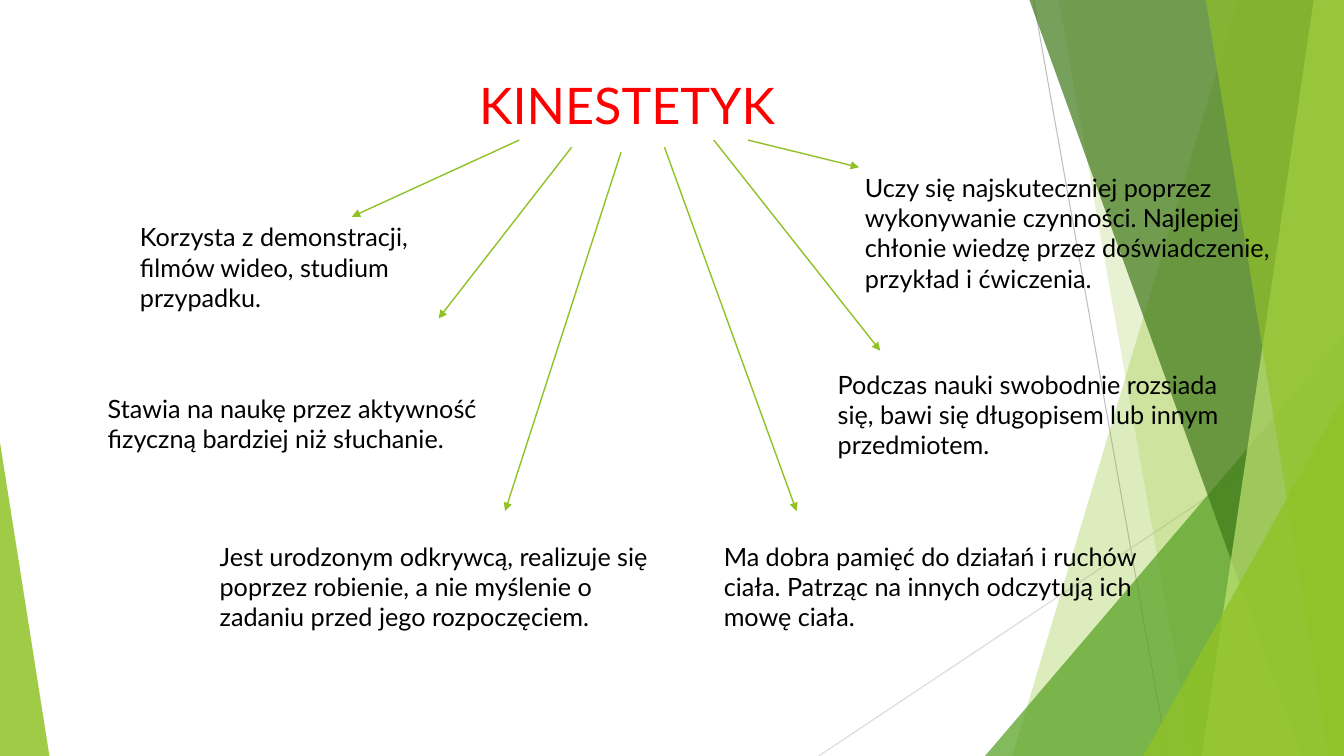
from dataclasses import dataclass

from lxml.etree import SubElement
from pptx import Presentation
from pptx.dml.color import RGBColor
from pptx.enum.shapes import MSO_CONNECTOR as Connector, MSO_SHAPE as Shape
from pptx.enum.text import MSO_ANCHOR as Anchor, MSO_AUTO_SIZE as AutoSize, PP_ALIGN as Align
from pptx.oxml.ns import qn
from pptx.util import Inches, Pt


@dataclass(frozen=True)
class Theme:
    font: str = "Lato"
    title_size: int = 36
    body_size: int = 18
    title: str = "FF0000"
    text: str = "000000"
    lime: str = "90C226"
    green: str = "54A021"
    forest: str = "3F7819"
    pale: str = "C0E474"
    gray: str = "BFBFBF"
    light_gray: str = "D9D9D9"


THEME = Theme()
WIDTH, HEIGHT = 13.33, 7.5

# Content: text and its box (left, top, width, height)
TITLE = "KINESTETYK"
TITLE_BOX = (0.74, 0.67, 9.4, 0.73)
TITLE_INDENT = 1.56
TRAITS = [
    ("Uczy się najskuteczniej poprzez wykonywanie czynności. Najlepiej chłonie "
     "wiedzę przez doświadczenie, przykład i ćwiczenia.", (8.48, 1.66, 4.48, 1.31)),
    ("Podczas nauki swobodnie rozsiada się, bawi się długopisem lub innym "
     "przedmiotem.", (8.21, 3.61, 4.31, 1.01)),
    ("Stawia na naukę przez aktywność fizyczną bardziej niż słuchanie.",
     (0.97, 3.85, 4.37, 0.71)),
    ("Jest urodzonym odkrywcą, realizuje się poprzez robienie, a nie myślenie o "
     "zadaniu przed jego rozpoczęciem.", (2.08, 5.32, 4.48, 1.01)),
    ("Korzysta z demonstracji, filmów wideo, studium przypadku.",
     (1.29, 2.15, 3.23, 1.01)),
    ("Ma dobra pamięć do działań i ruchów ciała. Patrząc na innych odczytują ich "
     "mowę ciała.", (7.08, 5.32, 4.31, 1.01)),
]
ARROWS = [  # start and end points
    ((5.15, 1.39), (3.49, 2.15)),
    ((5.67, 1.46), (4.35, 3.16)),
    ((6.16, 1.51), (5.01, 5.07)),
    ((6.59, 1.46), (7.9, 5.07)),
    ((7.08, 1.39), (8.73, 3.48)),
    ((7.42, 1.39), (8.52, 1.66)),
]

# Decoration, back to front
THIN_LINES = [
    ((10.25, 0), (11.58, HEIGHT), THEME.gray),
    ((WIDTH, 4.03), (8.12, HEIGHT), THEME.light_gray),
]
BANDS = "band"
TRIANGLE = "triangle"
FACETS = [  # band: top x, bottom x; triangle: left, top, right, apex
    (BANDS, (12.28, 10.04), THEME.lime, 30),
    (BANDS, (10.5, 11.83), THEME.lime, 20),
    (TRIANGLE, (9.77, 3.33, WIDTH, 1), THEME.green, 72),
    (BANDS, (10.21, 12.91), THEME.forest, 70),
    (BANDS, (13.03, 11.92), THEME.pale, 70),
    (BANDS, (11.96, 13.18), THEME.lime, 65),
    (TRIANGLE, (11.34, 3.93, WIDTH, 1), THEME.lime, 80),
    (TRIANGLE, (0, 4.39, 0.49, 0), THEME.lime, 85),
]


def write(frame, text, *, size, color, align=Align.LEFT, indent=0):
    para = frame.paragraphs[0]
    para.alignment = align
    if indent:
        para._p.get_or_add_pPr().set("marL", str(Inches(indent)))
    span = para.add_run()
    span.text = text
    span.font.name = THEME.font
    span.font.size = Pt(size)
    span.font.color.rgb = RGBColor.from_string(color)


def add_line(page, start, end, color, weight, arrow=False):
    line = page.shapes.add_connector(
        Connector.STRAIGHT, *(Inches(value) for value in (*start, *end)))
    line.line.color.rgb = RGBColor.from_string(color)
    line.line.width = Pt(weight)
    properties = line.element.spPr
    if arrow:
        SubElement(properties.find(qn("a:ln")), qn("a:tailEnd"), type="triangle")
    SubElement(properties, qn("a:effectLst"))


def add_band(page, top_x, bottom_x):
    corners = [(Inches(x), Inches(y)) for x, y in (
        (top_x, 0), (WIDTH, 0), (WIDTH, HEIGHT), (bottom_x, HEIGHT))]
    builder = page.shapes.build_freeform(*corners[0])
    builder.add_line_segments(corners[1:], close=True)
    return builder.convert_to_shape()


def add_triangle(page, left, top, right, apex):
    triangle = page.shapes.add_shape(
        Shape.ISOSCELES_TRIANGLE, Inches(left), Inches(top),
        Inches(right - left), Inches(HEIGHT - top))
    triangle.adjustments[0] = apex
    return triangle


def paint(shape, color, opacity):
    shape.shadow.inherit = False
    shape.line.fill.background()
    shape.fill.solid()
    shape.fill.fore_color.rgb = RGBColor.from_string(color)
    tint = next(shape.element.spPr.iter(qn("a:srgbClr")))
    SubElement(tint, qn("a:alpha"), val=str(opacity * 1000))


def main():
    deck = Presentation()
    deck.slide_width, deck.slide_height = Inches(WIDTH), Inches(HEIGHT)
    page = deck.slides.add_slide(deck.slide_layouts[5])

    # Green facets and thin lines
    for start, end, color in THIN_LINES:
        add_line(page, start, end, color, 0.75)
    for kind, geometry, color, opacity in FACETS:
        draw = add_band if kind == BANDS else add_triangle
        paint(draw(page, *geometry), color, opacity)

    # Title, brought in front of the facets
    title = page.shapes.title
    title.left, title.top, title.width, title.height = map(Inches, TITLE_BOX)
    title.text_frame.auto_size = AutoSize.NONE
    title.text_frame.vertical_anchor = Anchor.MIDDLE
    write(title.text_frame, TITLE, size=THEME.title_size, color=THEME.title,
          align=Align.CENTER, indent=TITLE_INDENT)
    title.element.getparent().append(title.element)

    # Traits
    for text, place in TRAITS:
        box = page.shapes.add_textbox(*map(Inches, place))
        box.text_frame.word_wrap = True
        box.text_frame.auto_size = AutoSize.SHAPE_TO_FIT_TEXT
        write(box.text_frame, text, size=THEME.body_size, color=THEME.text)

    # Arrows from the title
    for start, end in ARROWS:
        add_line(page, start, end, THEME.lime, 1, arrow=True)

    deck.save("out.pptx")


if __name__ == "__main__":
    main()
